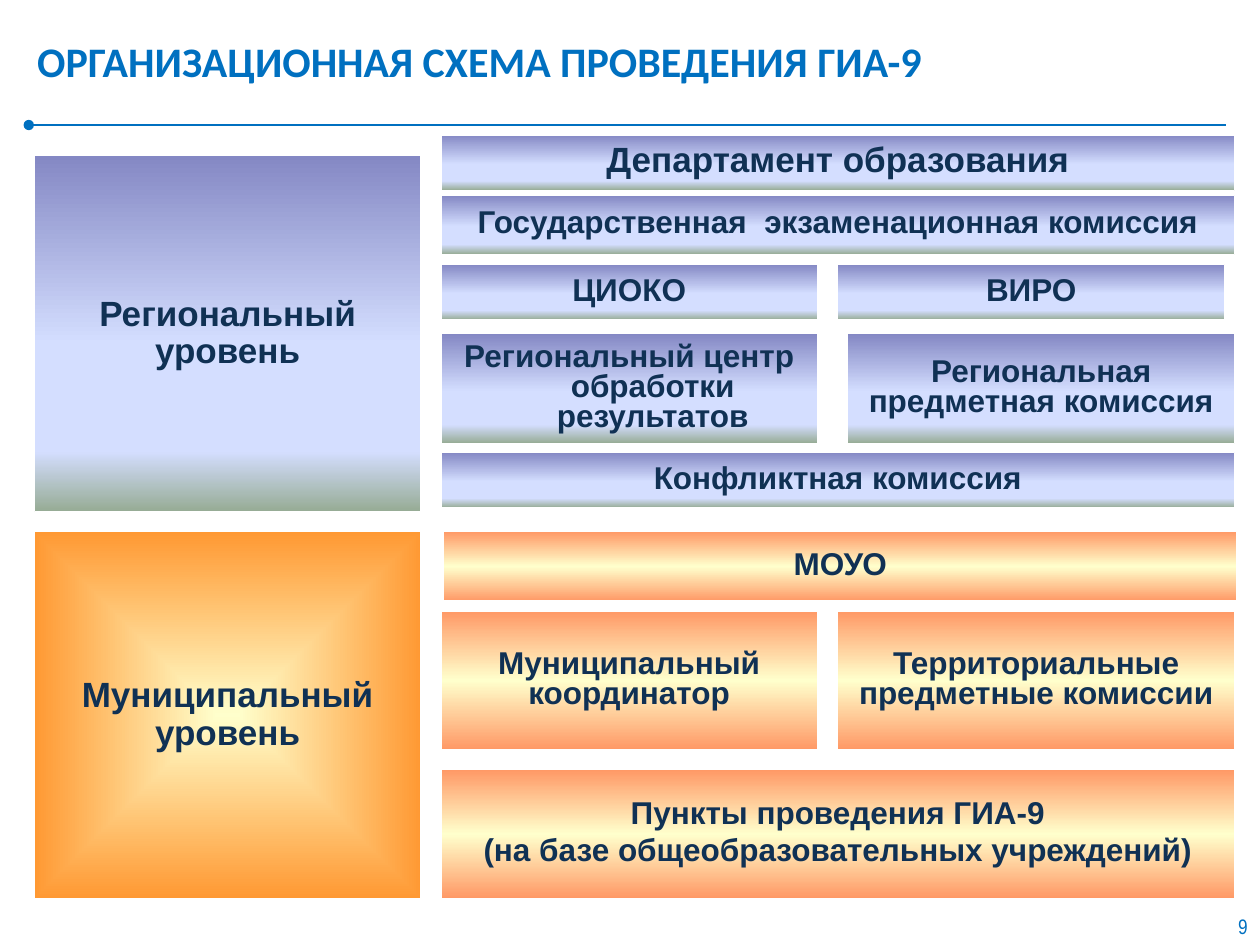
from lxml import etree
from pptx import Presentation
from pptx.dml.color import RGBColor
from pptx.enum.shapes import MSO_CONNECTOR, MSO_SHAPE
from pptx.enum.text import MSO_ANCHOR, PP_ALIGN
from pptx.oxml import parse_xml
from pptx.oxml.ns import nsdecls, qn
from pptx.util import Cm, Pt

RECTANGLE = MSO_SHAPE.RECTANGLE
STRAIGHT = MSO_CONNECTOR.STRAIGHT
MIDDLE, TOP = MSO_ANCHOR.MIDDLE, MSO_ANCHOR.TOP
LEFT, CENTER, RIGHT = PP_ALIGN.LEFT, PP_ALIGN.CENTER, PP_ALIGN.RIGHT

COLORS = {"accent": "0070C0", "text": "103154", "border": "FFFFFF"}
LINEAR = '<a:lin ang="5400000" scaled="1"/>'
FROM_CENTER = ('<a:path path="rect"><a:fillToRect l="50000" t="50000" '
               'r="50000" b="50000"/></a:path>')
# Gradient stops (percent, colour) and direction
GRADIENTS = {
    "regional": ([(0, "8488C4"), (53, "D4DEFF"), (83, "D4DEFF"), (100, "96AB94")], LINEAR),
    "municipal": ([(0, "FF9966"), (50, "FFFFCC"), (100, "FF9966")], LINEAR),
    "municipal_level": ([(0, "FFFFCC"), (100, "FF9933")], FROM_CENTER),
}
HANGING = 0.95

# Columns: left edge and width in cm
LEVEL = (0.69, 7.8)
FULL = (8.89, 16)
FIRST = (8.89, 7.59)
SECOND = (16.89, 8)

LEVEL_FORMAT = {"size": Pt(20), "spacing": 0.9}
# Column, top, height, gradient, lines, hanging indent, format changes
BOXES = [
    (LEVEL, 3.13, 7.19, "regional", ["Региональный уровень"], 0, LEVEL_FORMAT),
    (FULL, 2.72, 1.12, "regional", ["Департамент образования"], HANGING, {"size": Pt(20)}),
    (FULL, 3.94, 1.19, "regional", ["Государственная  экзаменационная комиссия"], HANGING, {}),
    (FIRST, 5.33, 1.12, "regional", ["ЦИОКО"], HANGING, {}),
    ((16.89, 7.8), 5.33, 1.12, "regional", ["ВИРО"], HANGING, {}),
    (FIRST, 6.73, 2.21, "regional", ["Региональный центр обработки результатов"], HANGING, {}),
    ((17.09, 7.8), 6.73, 2.21, "regional", ["Региональная предметная комиссия"], 0, {}),
    (FULL, 9.12, 1.12, "regional", ["Конфликтная комиссия"], HANGING, {}),
    (LEVEL, 10.72, 7.39, "municipal_level", ["Муниципальный уровень"], 0, LEVEL_FORMAT),
    ((8.94, 16), 10.72, 1.4, "municipal", ["МОУО"], HANGING, {}),
    (FIRST, 12.32, 2.79, "municipal", ["Муниципальный координатор"], 0, {}),
    (SECOND, 12.32, 2.79, "municipal", ["Территориальные предметные комиссии"], 0, {}),
    (FULL, 15.52, 2.59, "municipal",
     ["Пункты проведения ГИА-9", "(на базе общеобразовательных учреждений)"], HANGING, {}),
]


def rgb(name):
    return RGBColor.from_string(COLORS[name])


def write_paragraph(paragraph, text, alignment, color, font_format):
    paragraph.text = text
    paragraph.alignment = alignment
    for attribute, value in font_format.items():
        setattr(paragraph.font, attribute, value)
    paragraph.font.color.rgb = rgb(color)


def apply_gradient(shape, name):
    stops, direction = GRADIENTS[name]
    stop_xml = "".join(
        f'<a:gs pos="{position * 1000}"><a:srgbClr val="{color}"/></a:gs>'
        for position, color in stops)
    gradient = parse_xml(f'<a:gradFill {nsdecls("a")} rotWithShape="1">'
                         f'<a:gsLst>{stop_xml}</a:gsLst>{direction}</a:gradFill>')
    shape.fill.background()
    properties = shape._element.spPr
    properties.replace(properties.find(qn("a:noFill")), gradient)


def add_box(slide, column, top, height, gradient, lines, indent, changes):
    left, width = column
    shape = slide.shapes.add_shape(RECTANGLE, Cm(left), Cm(top), Cm(width), Cm(height))
    shape.shadow.inherit = False
    apply_gradient(shape, gradient)
    shape.line.color.rgb = rgb("border")
    shape.line.width = Pt(0.75)

    look = {"size": Pt(18), "spacing": 0.8, **changes}
    font_format = {"name": "Arial", "size": look["size"], "bold": True}
    frame = shape.text_frame
    frame.word_wrap = True
    frame.vertical_anchor = MIDDLE
    for index, line in enumerate(lines):
        paragraph = frame.add_paragraph() if index else frame.paragraphs[0]
        write_paragraph(paragraph, line, CENTER, "text", font_format)
        paragraph.line_spacing = look["spacing"]
        if index:
            paragraph.space_before = Pt(3.6)
        if indent:
            properties = paragraph._p.get_or_add_pPr()
            properties.set("marL", str(Cm(indent)))
            properties.set("indent", str(-Cm(indent)))


def add_label(slide, area, text, alignment, anchor, font_format):
    frame = slide.shapes.add_textbox(*map(Cm, area)).text_frame
    frame.word_wrap = True
    frame.vertical_anchor = anchor
    write_paragraph(frame.paragraphs[0], text, alignment, "accent", font_format)


def add_rule(slide):
    rule = slide.shapes.add_connector(STRAIGHT, Cm(0.58), Cm(2.52), Cm(24.71), Cm(2.52))
    rule.line.color.rgb = rgb("accent")
    rule.line.width = Pt(1.25)
    etree.SubElement(rule.line._get_or_add_ln(), qn("a:headEnd"), type="oval")
    etree.SubElement(rule._element.spPr, qn("a:effectLst"))


def main():
    presentation = Presentation()
    presentation.slide_width, presentation.slide_height = Cm(25.4), Cm(19.05)
    slide = presentation.slides.add_slide(presentation.slide_layouts[6])

    # Heading and page number
    add_rule(slide)
    add_label(slide, (0.5, 0.33, 22.86, 1.8), "ОРГАНИЗАЦИОННАЯ СХЕМА ПРОВЕДЕНИЯ ГИА-9",
              LEFT, MIDDLE, {"name": "Calibri", "size": Pt(24), "bold": True})
    add_label(slide, (24.1, 18.29, 1.3, 0.76), "9",
              RIGHT, TOP, {"name": "Arial Narrow", "size": Pt(12)})

    # Regional and municipal levels
    for box in BOXES:
        add_box(slide, *box)

    presentation.save("out.pptx")


if __name__ == "__main__":
    main()
